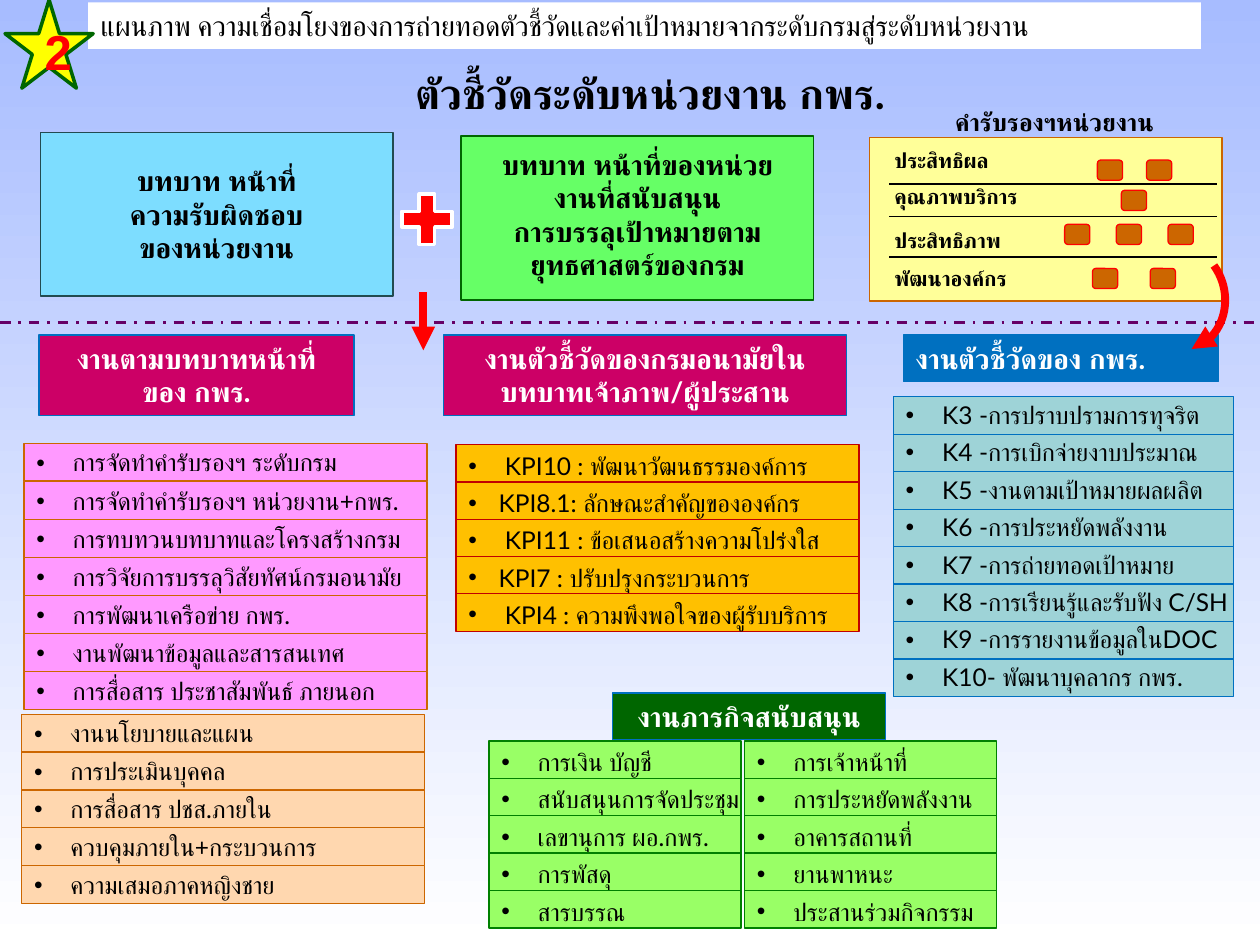
from lxml import etree
from pptx import Presentation
from pptx.dml.color import RGBColor
from pptx.enum.dml import MSO_LINE
from pptx.enum.shapes import MSO_CONNECTOR, MSO_SHAPE
from pptx.enum.text import MSO_ANCHOR, MSO_AUTO_SIZE, PP_ALIGN
from pptx.oxml.ns import qn
from pptx.util import Pt

RECT, ROUND, PLUS = MSO_SHAPE.RECTANGLE, MSO_SHAPE.ROUNDED_RECTANGLE, MSO_SHAPE.CROSS
ARC, STAR = MSO_SHAPE.ARC, MSO_SHAPE.STAR_5_POINT
STRAIGHT = MSO_CONNECTOR.STRAIGHT
LEFT, CENTER = PP_ALIGN.LEFT, PP_ALIGN.CENTER
TOP, MIDDLE = MSO_ANCHOR.TOP, MSO_ANCHOR.MIDDLE
GROW, FIXED = MSO_AUTO_SIZE.SHAPE_TO_FIT_TEXT, MSO_AUTO_SIZE.NONE
DASH_DOT = MSO_LINE.DASH_DOT

COLORS = {
    "sky": "A7BCFF", "white": "FFFFFF", "black": "000000", "red": "FF0000",
    "yellow": "FFFF00", "dark green": "006600", "purple": "660066",
    "cyan": "7DDDFF", "slate": "224B50", "mint": "66FF66", "cream": "FFFF99",
    "brown": "CC6600", "magenta": "CC0066", "blue": "0070C0", "pink": "FF99FF",
    "peach": "FFD7AF", "amber": "FFC000", "dark red": "C00000",
    "teal": "9ED3D7", "lime": "99FF66", "green": "008000",
}
ROW_HEIGHT = 21.6
BULLET_INDENT = 17.3


def color(name):
    return RGBColor.from_string(COLORS[name])


def write(shape, text, size=16, bold=True, ink="black", font="Lato", align=CENTER,
          anchor=TOP, wrap=True, grow=False, spacing=None, bullet=False, hanging=0):
    """Fill the shape with one paragraph for each line of text."""
    frame = shape.text_frame
    frame.word_wrap = wrap
    frame.auto_size = GROW if grow else FIXED
    frame.vertical_anchor = anchor
    for index, line in enumerate(text.split("\n")):
        para = frame.add_paragraph() if index else frame.paragraphs[0]
        para.alignment = align
        if spacing:
            para.line_spacing = spacing
        if bullet or hanging:
            props = para._p.get_or_add_pPr()
            indent = hanging or BULLET_INDENT
            props.set("marL", str(Pt(indent)))
            props.set("indent", str(Pt(-indent)))
            if bullet:
                etree.SubElement(props, qn("a:buFont")).set("typeface", "Arial")
                etree.SubElement(props, qn("a:buChar")).set("char", "•")
        span = para.add_run()
        span.text = line
        span.font.name = font
        span.font.size = Pt(size)
        span.font.bold = bold
        span.font.color.rgb = color(ink)


def add_box(page, box, fill=None, line=None, width=0.75, kind=RECT):
    shape = page.shapes.add_shape(kind, *map(Pt, box))
    shape.shadow.inherit = False
    if fill:
        shape.fill.solid()
        shape.fill.fore_color.rgb = color(fill)
    else:
        shape.fill.background()
    if line:
        shape.line.color.rgb = color(line)
        shape.line.width = Pt(width)
    else:
        shape.line.fill.background()
    return shape


def add_label(page, box, text, **style):
    label = page.shapes.add_textbox(*map(Pt, box))
    write(label, text, grow=True, **style)


def add_line(page, start, end, ink="black", width=0.75):
    line = page.shapes.add_connector(STRAIGHT, *map(Pt, start + end))
    line.line.color.rgb = color(ink)
    line.line.width = Pt(width)
    etree.SubElement(line._element.spPr, qn("a:effectLst"))
    return line


def add_arrowhead(shape, end):
    outline = shape.line._get_or_add_ln()
    etree.SubElement(outline, qn("a:" + end)).set("type", "triangle")


def add_list(page, box, rows, fill, line, spacing=None):
    """Stack bulleted rows evenly from the top to the bottom of the box."""
    left, top, width, height = box
    pitch = (height - ROW_HEIGHT) / (len(rows) - 1)
    for index, text in enumerate(rows):
        row = add_box(page, (left, top + index * pitch, width, ROW_HEIGHT), fill, line)
        write(row, text, size=14, bold=False, align=LEFT, wrap=False,
              spacing=spacing, bullet=True)


def add_heading(page, box, text, fill, align=CENTER):
    write(add_box(page, box, fill, "blue"), text, ink="white", align=align, grow=True)


def add_commitment_panel(page, box):
    left, top, width, height = box
    add_box(page, box, "cream", "brown")
    for offset in (26.6, 45.3, 68.4):
        add_line(page, (left + 11.5, top + offset), (left + 198.7, top + offset))
    perspectives = [
        ("ประสิทธิผล", 2.2, 13, (130.3, 158.4)),
        ("คุณภาพบริการ", 23, 30.3, (144,)),
        ("ประสิทธิภาพ", 48.2, 49.7, (111.6, 141.1, 170.7)),
        ("พัฒนาองค์กร", 69.9, 74.9, (127.5, 160.5)),
    ]
    for text, text_top, mark_top, marks in perspectives:
        add_label(page, (left + 7.2, top + text_top, 100.8, 21.6), text,
                  size=12, align=LEFT)
        for offset in marks:
            add_box(page, (left + offset, top + mark_top, 14.4, 11.5),
                    "brown", "red", kind=ROUND)
    add_label(page, (left + 5, top - 20.9, width, 24.5), "คำรับรองฯหน่วยงาน",
              size=14, font="Arial")


def add_roles(page, box):
    """Place the two role boxes joined by a plus sign."""
    left, top, width, height = box
    own = add_box(page, (left, top, 201.6, height), "cyan", "slate")
    write(own, "บทบาท หน้าที่\nความรับผิดชอบ\nของหน่วยงาน", anchor=MIDDLE, wrap=False)
    add_box(page, (left + width - 201.6, top + 2.2, 201.6, height), "mint", "dark green")
    add_label(page, (left + 251.3, top + 5, 180, 85),
              "บทบาท หน้าที่ของหน่วยงานที่สนับสนุน\nการบรรลุเป้าหมายตามยุทธศาสตร์ของกรม")
    plus = add_box(page, (left + 206.6, top + 35.3, 28.8, 28.8), "red", "white", 2, PLUS)
    plus.adjustments[0] = 0.346


def add_banner(page, box):
    left, top, width, height = box
    strip = add_box(page, (left + 47.5, top + 1.4, width - 47.5, height), "white")
    write(strip, "แผนภาพ ความเชื่อมโยงของการถ่ายทอดตัวชี้วัดและค่าเป้าหมายจากระดับกรมสู่ระดับหน่วยงาน",
          bold=False, align=LEFT, hanging=27.4, grow=True)
    star = add_box(page, (left, top, 50.4, 50.4), "yellow", "dark green", 2, STAR)
    write(star, "2", size=28, ink="red", font="Arial", anchor=MIDDLE)


def add_flow_arrows(page):
    down = add_line(page, (241.9, 200.2), (241.9, 167), "red", 4.5)
    add_arrowhead(down, "headEnd")
    curve = add_box(page, (640.8, 141.8, 61.9, 56.2), line="red", width=4.5, kind=ARC)
    curve.rotation = 72.8
    curve.adjustments[0] = 148.525
    curve.adjustments[1] = 0
    add_arrowhead(curve, "tailEnd")


def add_work_lists(page):
    add_heading(page, (253.4, 191.5, 230.4, 46.1),
                "งานตัวชี้วัดของกรมอนามัยในบทบาทเจ้าภาพ/ผู้ประสาน", "magenta")
    add_heading(page, (516.2, 191.5, 180, 26.6), "งานตัวชี้วัดของ กพร.", "blue", LEFT)
    add_heading(page, (22.3, 191.5, 180, 46.1), "งานตามบทบาทหน้าที่ ของ กพร.", "magenta")
    add_heading(page, (350, 396, 156.2, 26.6), "งานภารกิจสนับสนุน", "dark green")
    add_list(page, (13.7, 253.4, 230.4, 152), [
        " การจัดทำคำรับรองฯ ระดับกรม", " การจัดทำคำรับรองฯ หน่วยงาน+กพร.",
        " การทบทวนบทบาทและโครงสร้างกรม", " การวิจัยการบรรลุวิสัยทัศน์กรมอนามัย",
        " การพัฒนาเครือข่าย กพร.", " งานพัฒนาข้อมูลและสารสนเทศ",
        " การสื่อสาร ประชาสัมพันธ์ ภายนอก"], "pink", "brown", 0.95)
    add_list(page, (12.4, 408.2, 230.4, 108), [
        " งานนโยบายและแผน", " การประเมินบุคคล", " การสื่อสาร ปชส.ภายใน",
        " ควบคุมภายใน+กระบวนการ", " ความเสมอภาคหญิงชาย"], "peach", "brown", 0.95)
    add_list(page, (260.6, 254.2, 230.4, 106.6), [
        " KPI10 : พัฒนาวัฒนธรรมองค์การ", "KPI8.1: ลักษณะสำคัญขององค์กร",
        " KPI11 : ข้อเสนอสร้างความโปร่งใส", "KPI7 : ปรับปรุงกระบวนการ",
        " KPI4 : ความพึงพอใจของผู้รับบริการ"], "amber", "dark red")
    add_list(page, (510.5, 226.8, 194.4, 171.4), [
        " K3 -การปราบปรามการทุจริต", " K4 -การเบิกจ่ายงาบประมาณ",
        " K5 -งานตามเป้าหมายผลผลิต", " K6 -การประหยัดพลังงาน",
        " K7 -การถ่ายทอดเป้าหมาย", " K8 -การเรียนรู้และรับฟัง C/SH",
        " K9 -การรายงานข้อมูลในDOC", " K10- พัฒนาบุคลากร กพร."], "teal", "blue", 0.9)
    add_list(page, (279.4, 423.4, 144, 107), [
        " การเงิน บัญชี", " สนับสนุนการจัดประชุม", " เลขานุการ ผอ.กพร.",
        " การพัสดุ", " สารบรรณ"], "lime", "green")
    add_list(page, (425.5, 423.4, 144, 107), [
        " การเจ้าหน้าที่", " การประหยัดพลังงาน", " อาคารสถานที่",
        " ยานพาหนะ", " ประสานร่วมกิจกรรม"], "lime", "green")


def paint_background(page):
    fill = page.background.fill
    fill.gradient()
    fill.gradient_angle = 270
    for stop, name, position in zip(fill.gradient_stops, ("sky", "white"), (0, 1)):
        stop.color.rgb = color(name)
        stop.position = position


def main():
    deck = Presentation()
    deck.slide_width, deck.slide_height = Pt(720), Pt(540)
    page = deck.slides.add_slide(deck.slide_layouts[6])
    paint_background(page)
    divider = add_line(page, (0, 184.3), (720, 184.3), "purple", 1.5)
    divider.line.dash_style = DASH_DOT
    add_label(page, (163.4, 35.3, 416.2, 36), "ตัวชี้วัดระดับหน่วยงาน กพร.", size=24)
    add_roles(page, (23, 75.6, 442.1, 93.6))
    add_commitment_panel(page, (496.8, 78.5, 201.6, 93.6))
    add_work_lists(page)
    add_flow_arrows(page)
    add_banner(page, (2.9, 0, 683.3, 26.6))
    deck.save("out.pptx")


if __name__ == "__main__":
    main()
